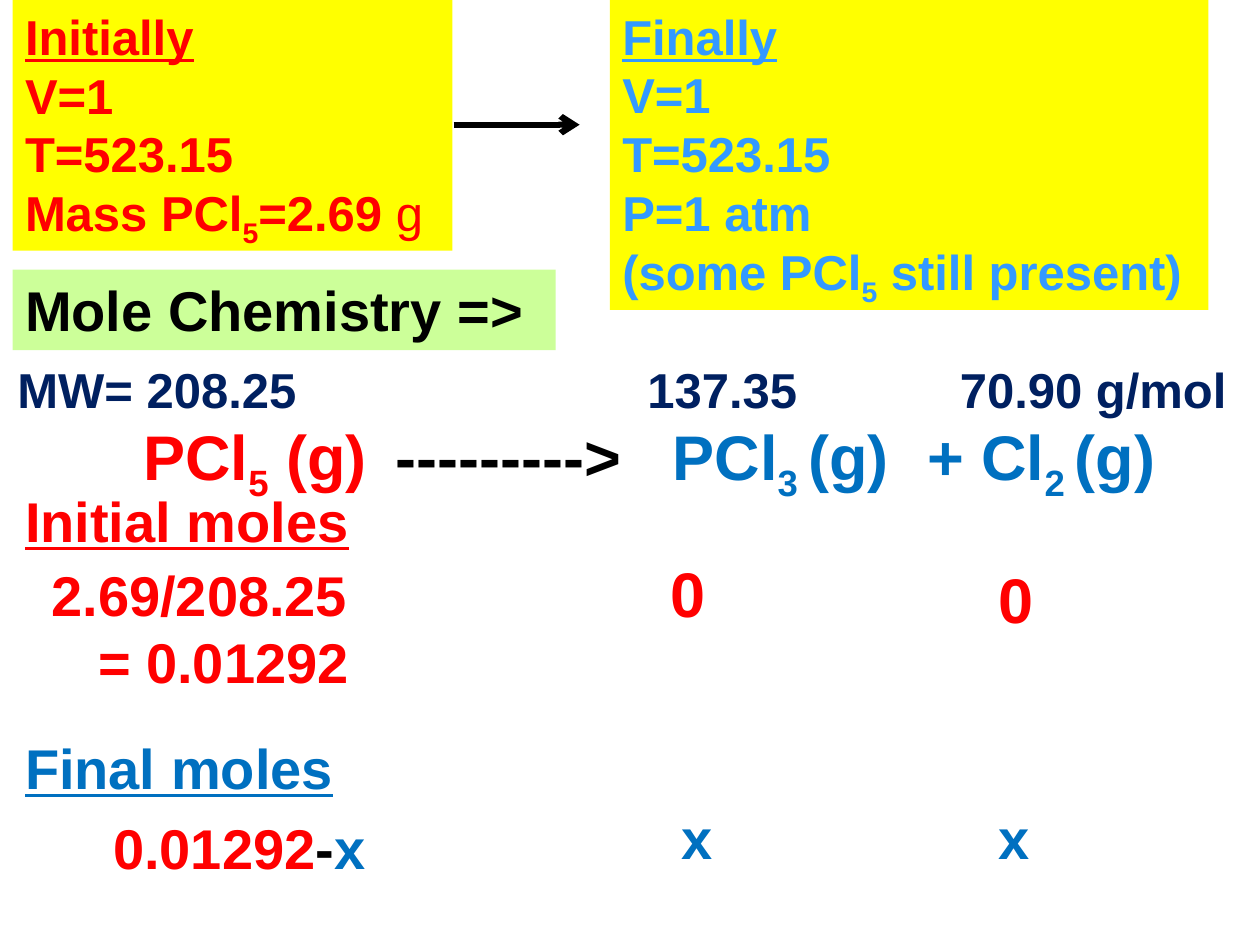
from dataclasses import dataclass

from lxml.etree import SubElement
from pptx import Presentation
from pptx.dml.color import RGBColor
from pptx.enum.shapes import MSO_CONNECTOR as Connector, MSO_SHAPE as Shape
from pptx.enum.text import MSO_ANCHOR as Anchor, MSO_AUTO_SIZE as AutoSize, PP_ALIGN as Align
from pptx.oxml.ns import qn
from pptx.util import Pt

PX = 9144
FONT = "Arial"
BLACK = RGBColor(0x00, 0x00, 0x00)
RED = RGBColor(0xFF, 0x00, 0x00)
BLUE = RGBColor(0x00, 0x70, 0xC0)
SKY = RGBColor(0x33, 0x99, 0xFF)
NAVY = RGBColor(0x00, 0x20, 0x60)
YELLOW = RGBColor(0xFF, 0xFF, 0x00)
LIME = RGBColor(0xCC, 0xFF, 0x99)


@dataclass(frozen=True)
class Span:
    text: str
    color: RGBColor | None = None
    bold: bool = True
    underline: bool = False
    subscript: bool = False


@dataclass(frozen=True)
class Line:
    spans: tuple[Span, ...]
    size: int | None = None
    indent: int = 0
    tabs: tuple[int, ...] = ()


@dataclass(frozen=True)
class Block:
    left: int
    top: int
    width: int
    height: int
    lines: tuple[Line, ...]
    size: int = 32
    color: RGBColor = RED
    fill: RGBColor | None = None


def line(*parts: str | Span, **layout) -> Line:
    return Line(tuple(Span(part) if isinstance(part, str) else part for part in parts), **layout)


def sub(text: str, color: RGBColor | None = None) -> Span:
    return Span(text, color, subscript=True)


def heading(text: str) -> Line:
    return line(Span(text, underline=True))


def add_text(para, text: str, *, size: int, color: RGBColor, bold: bool = True,
             underline: bool = False, subscript: bool = False) -> None:
    run = para.add_run()
    run.text = text
    font = run.font
    font.name, font.size, font.bold = FONT, Pt(size), bold
    font.underline = underline
    font.color.rgb = color
    if subscript:
        run._r.get_or_add_rPr().set("baseline", "-25000")


def format_line(para, layout: Line) -> None:
    para.alignment = Align.LEFT
    properties = para._p.get_or_add_pPr()
    if layout.indent:
        properties.set("marL", str(layout.indent * PX))
    if layout.tabs:
        stops = SubElement(properties, qn("a:tabLst"))
        for stop in layout.tabs:
            SubElement(stops, qn("a:tab"), pos=str(stop * PX), algn="l")


def draw_block(page, block: Block) -> None:
    bounds = [length * PX for length in (block.left, block.top, block.width, block.height)]
    if block.fill is None:
        box = page.shapes.add_textbox(*bounds)
    else:
        box = page.shapes.add_shape(Shape.RECTANGLE, *bounds)
        box.shadow.inherit = False
        box.fill.solid()
        box.fill.fore_color.rgb = block.fill
        box.line.fill.background()
    frame = box.text_frame
    frame.word_wrap = True
    frame.auto_size = AutoSize.SHAPE_TO_FIT_TEXT
    frame.vertical_anchor = Anchor.TOP
    for index, row in enumerate(block.lines):
        para = frame.add_paragraph() if index else frame.paragraphs[0]
        format_line(para, row)
        for span in row.spans:
            add_text(para, span.text, size=row.size or block.size,
                     color=block.color if span.color is None else span.color,
                     bold=span.bold, underline=span.underline, subscript=span.subscript)


def draw_arrow(page, left: int, right: int, y: int) -> None:
    arrow = page.shapes.add_connector(Connector.STRAIGHT, left * PX, y * PX, right * PX, y * PX)
    arrow.line.color.rgb = BLACK
    arrow.line.width = Pt(3.5)
    SubElement(arrow.line._get_or_add_ln(), qn("a:tailEnd"), type="arrow")
    SubElement(arrow._element.spPr, qn("a:effectLst"))


VOLUME, TEMPERATURE = line("V=1"), line("T=523.15")

INITIAL_STATE = Block(10, 0, 349, 199, (
    heading("Initially"), VOLUME, TEMPERATURE,
    line("Mass PCl", sub("5"), "=2.69 ", Span("g", bold=False)),
), size=28, fill=YELLOW)

FINAL_STATE = Block(484, 0, 475, 246, (
    heading("Finally"), VOLUME, TEMPERATURE, line("P=1 atm"),
    line("(some PCl", sub("5"), " still present)"),
), size=28, color=SKY, fill=YELLOW)

REACTION = Block(4, 280, 998, 145, (
    line("MW= 208.25\t137.35\t70.90 g/mol", size=28, tabs=(500, 748)),
    line(Span("\tPCl", RED), sub("5", RED), Span(" (g)", RED),
         Span("\t--------->", BLACK),
         Span("\tPCl", BLUE), sub("3 ", BLUE), Span("(g)", BLUE),
         Span("\t+ Cl", BLUE), sub("2 ", BLUE), Span("(g)", BLUE),
         size=36, tabs=(100, 300, 520, 722)),
), color=NAVY)

BLOCKS = (
    INITIAL_STATE,
    FINAL_STATE,
    Block(10, 214, 431, 64, (line("Mole Chemistry =>"),), color=BLACK, fill=LIME),
    REACTION,
    Block(10, 381, 331, 64, (heading("Initial moles"),)),
    Block(31, 440, 379, 118, (line("2.69/208.25"), line("= 0.01292", indent=37))),
    Block(522, 435, 103, 71, (line("0"),), size=36),
    Block(783, 440, 103, 71, (line("0"),), size=36),
    Block(10, 577, 562, 64, (heading("Final moles"),), color=BLUE),
    Block(31, 641, 350, 64,
          (line("0.01292", Span("-", BLACK), Span("x", BLUE), indent=49),)),
    Block(531, 633, 94, 64, (line("x"),), color=BLUE),
    Block(783, 633, 94, 64, (line("x"),), color=BLUE),
)


def main() -> None:
    deck = Presentation()
    deck.slide_width, deck.slide_height = 1000 * PX, 750 * PX
    page = deck.slides.add_slide(deck.slide_layouts[6])
    for block in BLOCKS:
        draw_block(page, block)
    draw_arrow(page, 360, 460, 99)
    deck.save("out.pptx")


if __name__ == "__main__":
    main()
